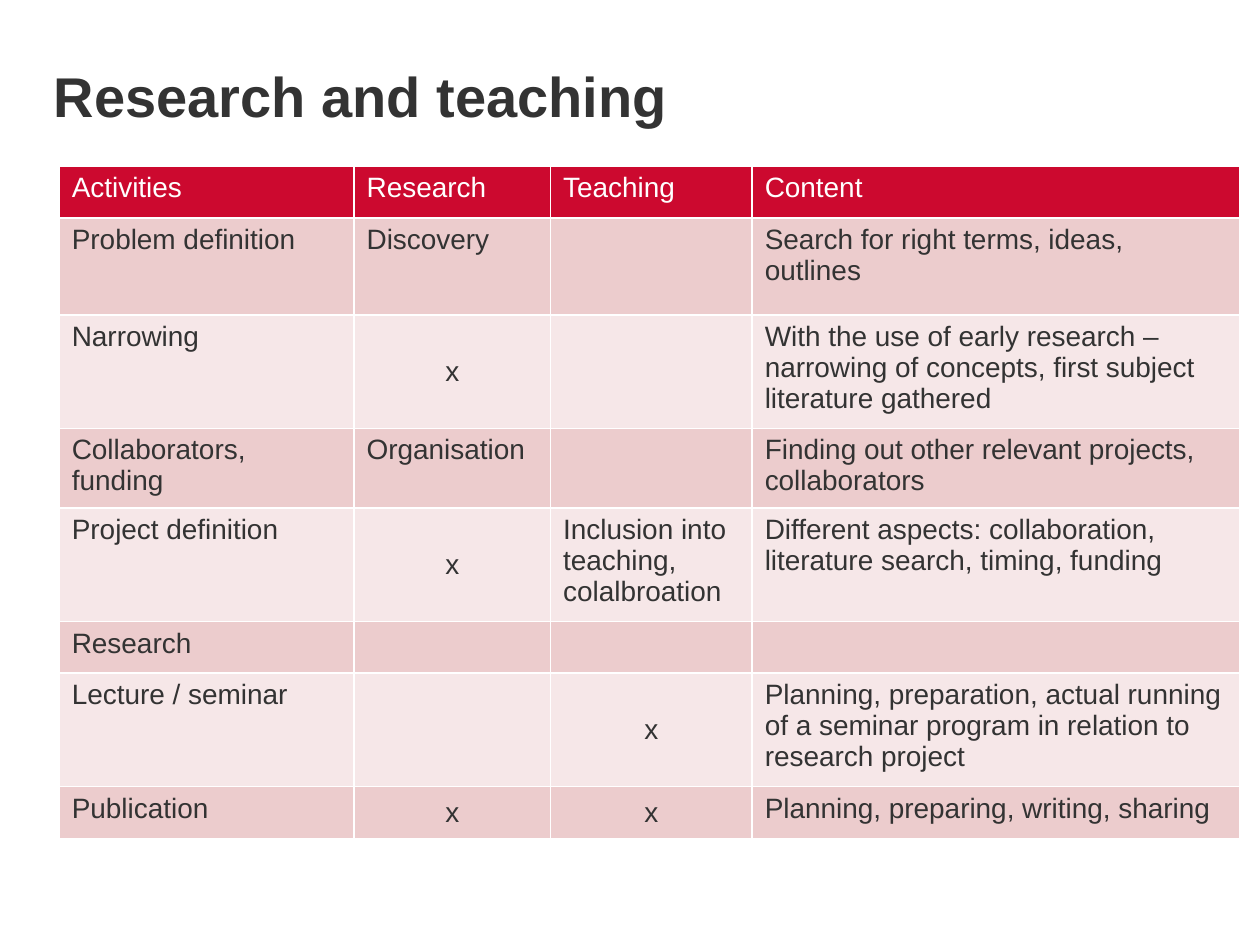
from dataclasses import dataclass

from pptx import Presentation
from pptx import util as u
from pptx.dml.color import RGBColor
from pptx.enum import text

WHITE = RGBColor(0xFF, 0xFF, 0xFF)
INK = RGBColor(0x33, 0x33, 0x33)
RED = RGBColor(0xCC, 0x09, 0x2F)
ROSE = RGBColor(0xEC, 0xCC, 0xCD)
PALE = RGBColor(0xF6, 0xE7, 0xE8)
MARK = "x"
WIDTHS = (2.34, 1.56, 1.6, 3.87)


@dataclass(frozen=True)
class Row:
    high: float
    cells: tuple[str, str, str, str]


ROWS = (
    Row(0.41, ("Activities", "Research", "Teaching", "Content")),
    Row(0.77, ("Problem definition", "Discovery", "",
               "Search for right terms, ideas, outlines")),
    Row(0.84, ("Narrowing", MARK, "",
               "With the use of early research – narrowing of concepts, "
               "first subject literature gathered")),
    Row(0.6, ("Collaborators, funding", "Organisation", "",
              "Finding out other relevant projects, collaborators")),
    Row(0.84, ("Project definition", MARK, "Inclusion into teaching, colalbroation",
               "Different aspects: collaboration, literature search, timing, funding")),
    Row(0.41, ("Research", "", "", "")),
    Row(0.84, ("Lecture / seminar", "", MARK,
               "Planning, preparation, actual running of a seminar program "
               "in relation to research project")),
    Row(0.41, ("Publication", MARK, MARK, "Planning, preparing, writing, sharing")),
)


def style(para, size: int, color: RGBColor, bold: bool = False) -> None:
    font = para.font
    font.name, font.size, font.bold = "Arial", u.Pt(size), bold
    font.color.rgb = color


def add_title(slide, words: str) -> None:
    box = slide.shapes.add_textbox(
        u.Inches(0.33), u.Inches(0.17), u.Inches(7.83), u.Inches(1.17))
    frame = box.text_frame
    frame.word_wrap = True
    frame.vertical_anchor = text.MSO_ANCHOR.MIDDLE
    frame.text = words
    style(frame.paragraphs[0], 32, INK, True)


def fill_cell(cell, words: str, back: RGBColor, ink: RGBColor) -> None:
    cell.fill.solid()
    cell.fill.fore_color.rgb = back
    cell.text = words
    para = cell.text_frame.paragraphs[0]
    style(para, 16, ink)
    if words == MARK:
        cell.vertical_anchor = text.MSO_ANCHOR.MIDDLE
        para.alignment = text.PP_ALIGN.CENTER


def add_grid(slide, rows: tuple[Row, ...]) -> None:
    grid = slide.shapes.add_table(
        len(rows), len(WIDTHS), u.Inches(0.47), u.Inches(1.32),
        u.Inches(sum(WIDTHS)), u.Inches(sum(row.high for row in rows))).table
    for col, wide in zip(grid.columns, WIDTHS):
        col.width = u.Inches(wide)
    for i, row in enumerate(rows):
        grid.rows[i].height = u.Inches(row.high)
        back = RED if i == 0 else (PALE, ROSE)[i % 2]
        for j, words in enumerate(row.cells):
            fill_cell(grid.cell(i, j), words, back, INK if i else WHITE)


def main() -> None:
    """Build the research and teaching slide."""
    deck = Presentation()
    deck.slide_width, deck.slide_height = u.Inches(10), u.Inches(7.5)
    slide = deck.slides.add_slide(deck.slide_layouts[6])
    add_title(slide, "Research and teaching")
    add_grid(slide, ROWS)
    deck.save("out.pptx")


if __name__ == "__main__":
    main()
